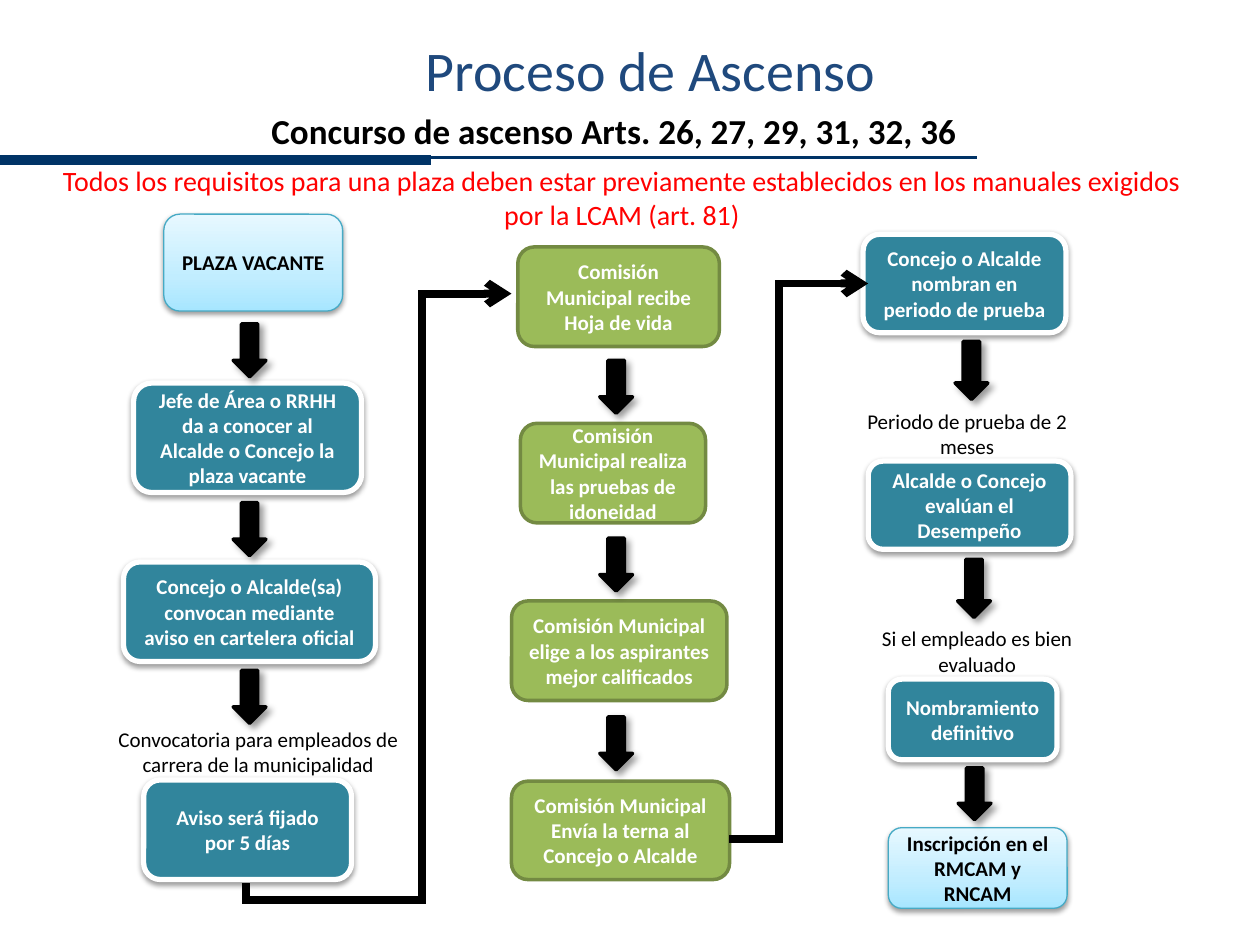
from copy import deepcopy
from dataclasses import dataclass
from itertools import pairwise

from lxml.etree import SubElement
from pptx import Presentation
from pptx.dml.color import RGBColor
from pptx.enum.shapes import MSO_CONNECTOR, MSO_SHAPE
from pptx.enum.text import MSO_ANCHOR, MSO_AUTO_SIZE, PP_ALIGN
from pptx.oxml.ns import qn
from pptx.util import Pt

BLACK = RGBColor(0x00, 0x00, 0x00)
WHITE = RGBColor(0xFF, 0xFF, 0xFF)
RED = RGBColor(0xFF, 0x00, 0x00)
NAVY = RGBColor(0x00, 0x33, 0x66)
TITLE_BLUE = RGBColor(0x1F, 0x49, 0x7D)
TEAL = RGBColor(0x31, 0x85, 0x9C)
GREEN = RGBColor(0x9B, 0xBB, 0x59)
GREEN_EDGE = RGBColor(0x73, 0x8A, 0x42)
SKY_EDGE = RGBColor(0x46, 0xAA, 0xC5)
SKY_STOPS = [(0, RGBColor(0xA7, 0xE6, 0xFF)),
             (0.35, RGBColor(0xC1, 0xED, 0xFF)),
             (1, RGBColor(0xE7, 0xF8, 0xFF))]

# opacity in percent, blur and distance in points, direction in degrees
SOFT_SHADOW = (38, 3.1, 1.6, 90)
DIAGONAL_SHADOW = (40, 4, 3, 45)


@dataclass
class BoxStyle:
    fill: RGBColor | None  # None stands for the sky gradient
    edge: RGBColor
    edge_width: float
    ink: RGBColor
    shadow: tuple | None


TEAL_BOX = BoxStyle(TEAL, WHITE, 3, WHITE, SOFT_SHADOW)
GREEN_BOX = BoxStyle(GREEN, GREEN_EDGE, 2, WHITE, None)
SKY_BOX = BoxStyle(None, SKY_EDGE, 0.75, BLACK, SOFT_SHADOW)


def add_shadow(effects, opacity, blur, distance, direction):
    outer = SubElement(effects, qn("a:outerShdw"), blurRad=str(Pt(blur)),
                       dist=str(Pt(distance)), dir=str(direction * 60000),
                       algn="ctr", rotWithShape="0")
    color = SubElement(outer, qn("a:srgbClr"), val=str(BLACK))
    SubElement(color, qn("a:alpha"), val=str(opacity * 1000))


def fill_sky(shape):
    """Fill with the three-stop gradient, deepest colour at the bottom."""
    shape.fill.gradient()
    shape.fill.gradient_angle = 90
    stop_list = shape._element.spPr.find(qn("a:gradFill")).find(qn("a:gsLst"))
    stop_list.insert(1, deepcopy(stop_list[0]))
    for stop, (position, color) in zip(shape.fill.gradient_stops, SKY_STOPS):
        stop.position = position
        stop.color.rgb = color


class FlowSlide:
    font = "Calibri"
    body_size = 12
    route_width = 4.5
    arrow_thickness = 18.7

    def __init__(self, slide):
        self.slide = slide
        self.shapes = slide.shapes

    def add_text(self, frame, text, size, color, bold=False):
        frame.word_wrap = True
        paragraph = frame.paragraphs[0]
        paragraph.alignment = PP_ALIGN.CENTER
        run = paragraph.add_run()
        run.text = text
        run.font.size = Pt(size)
        run.font.bold = bold
        run.font.color.rgb = color
        run.font.name = self.font
        return run

    def title(self, text, left, top, width, height):
        heading = self.shapes.title
        heading.left, heading.top = Pt(left), Pt(top)
        heading.width, heading.height = Pt(width), Pt(height)
        frame = heading.text_frame
        frame.auto_size = MSO_AUTO_SIZE.NONE
        frame.vertical_anchor = MSO_ANCHOR.MIDDLE
        run = self.add_text(frame, text, 32, TITLE_BLUE)
        properties = run._r.get_or_add_rPr()
        effects = SubElement(properties, qn("a:effectLst"))
        add_shadow(effects, *DIAGONAL_SHADOW)
        properties.find(qn("a:solidFill")).addnext(effects)

    def label(self, text, left, top, width, height,
              size=body_size, color=BLACK, bold=False):
        note = self.shapes.add_textbox(Pt(left), Pt(top), Pt(width), Pt(height))
        self.add_text(note.text_frame, text, size, color, bold)

    def preset(self, kind, left, top, width, height, shadow):
        shape = self.shapes.add_shape(kind, Pt(left), Pt(top),
                                      Pt(width), Pt(height))
        shape.shadow.inherit = False
        if shadow:
            add_shadow(shape._element.spPr.find(qn("a:effectLst")), *shadow)
        return shape

    def step(self, style, text, left, top, width, height):
        box = self.preset(MSO_SHAPE.ROUNDED_RECTANGLE, left, top, width, height,
                          style.shadow)
        if style.fill is None:
            fill_sky(box)
        else:
            box.fill.solid()
            box.fill.fore_color.rgb = style.fill
        box.line.color.rgb = style.edge
        box.line.width = Pt(style.edge_width)
        box.text_frame.vertical_anchor = MSO_ANCHOR.MIDDLE
        self.add_text(box.text_frame, text, self.body_size, style.ink, bold=True)

    def down_arrow(self, center_x, center_y, length=30.2):
        arrow = self.preset(MSO_SHAPE.RIGHT_ARROW, center_x - length / 2,
                            center_y - self.arrow_thickness / 2,
                            length, self.arrow_thickness, DIAGONAL_SHADOW)
        arrow.rotation = 90
        arrow.fill.solid()
        arrow.fill.fore_color.rgb = BLACK
        arrow.line.color.rgb = BLACK
        arrow.line.width = Pt(2)

    def rule(self, start, end, color, width):
        line = self.shapes.add_connector(MSO_CONNECTOR.STRAIGHT,
                                         *map(Pt, start + end))
        line.line.color.rgb = color
        line.line.width = Pt(width)
        SubElement(line._element.spPr, qn("a:effectLst"))
        return line._element.spPr.find(qn("a:ln"))

    def route(self, *points):
        """Join the points by straight segments, with a head on the last one."""
        *bends, last = pairwise(points)
        for start, end in bends:
            self.rule(start, end, BLACK, self.route_width).set("cap", "sq")
        outline = self.rule(*last, BLACK, self.route_width)
        SubElement(outline, qn("a:tailEnd"), type="arrow")


STEPS = [
    (SKY_BOX, "PLAZA VACANTE", 93.6, 122.4, 102.2, 55.4),
    (TEAL_BOX, "Jefe de Área o RRHH da a conocer al Alcalde o Concejo la plaza vacante",
     76.3, 218.9, 130.3, 62.6),
    (TEAL_BOX, "Concejo o Alcalde(sa) convocan mediante aviso en cartelera oficial",
     70.6, 321.1, 144, 56.9),
    (TEAL_BOX, "Aviso será fijado por 5 días", 82.1, 445.7, 118.8, 56.9),
    (GREEN_BOX, "Comisión Municipal recibe Hoja de vida", 295.9, 141.1, 115.2, 56.9),
    (GREEN_BOX, "Comisión Municipal realiza las pruebas de idoneidad",
     297.4, 241.9, 105.8, 56.9),
    (GREEN_BOX, "Comisión Municipal elige a los aspirantes mejor calificados",
     292.3, 343.4, 123.1, 56.9),
    (GREEN_BOX, "Comisión Municipal Envía la terna al Concejo o Alcalde",
     292.3, 446.4, 124.6, 56.2),
    (TEAL_BOX, "Concejo o Alcalde nombran en periodo de prueba",
     493.2, 133.9, 115.9, 56.2),
    (TEAL_BOX, "Alcalde o Concejo evalúan el Desempeño", 496.1, 263.5, 115.9, 50.4),
    (TEAL_BOX, "Nombramiento definitivo", 507.6, 388.1, 96.5, 46.1),
    (SKY_BOX, "Inscripción en el RMCAM y RNCAM", 507.6, 473, 102.2, 46.1),
]
CONDITIONS = [
    ("Convocatoria para empleados de carrera de la municipalidad", 54, 411.8, 187.2, 36),
    ("Periodo de prueba de 2 meses", 484.6, 229.7, 136.1, 36),
    ("Si el empleado es bien evaluado", 490.3, 354.2, 136.1, 36),
]
DOWN_ARROWS = [
    (142.6, 200.2), (142.6, 302.4), (142.6, 398.2),
    (352.1, 221), (352.1, 322.6), (352.1, 424.8),
    (555.1, 211.7, 33.1), (556.6, 336.2, 33.1), (556.9, 453.6, 29.5),
]


def main():
    deck = Presentation()
    deck.slide_width, deck.slide_height = Pt(720), Pt(540)
    flow = FlowSlide(deck.slides.add_slide(deck.slide_layouts.get_by_name("Title Only")))

    flow.rule((558, 90), (0, 90), NAVY, 1.5)
    flow.rule((0, 91.4), (246.2, 91.4), NAVY, 6)
    flow.title("Proceso de Ascenso", 154.8, 15.1, 434.2, 49)
    flow.label("Concurso de ascenso Arts. 26, 27, 29, 31, 32, 36",
               113, 59, 475.9, 31.7, size=20, bold=True)
    flow.label("Todos los requisitos para una plaza deben estar previamente "
               "establecidos en los manuales exigidos por la LCAM (art. 81)",
               16.6, 90, 677.5, 46.1, size=16, color=RED)

    for step in STEPS:
        flow.step(*step)
    for condition in CONDITIONS:
        flow.label(*condition)
    for arrow in DOWN_ARROWS:
        flow.down_arrow(*arrow)
    flow.route((140.4, 507), (140.4, 514.1), (241.2, 514.1), (241.2, 167.8), (292.3, 167.8))
    flow.route((419, 479.5), (445, 479.5), (445, 162), (496.1, 162))
    deck.save("out.pptx")


if __name__ == "__main__":
    main()
